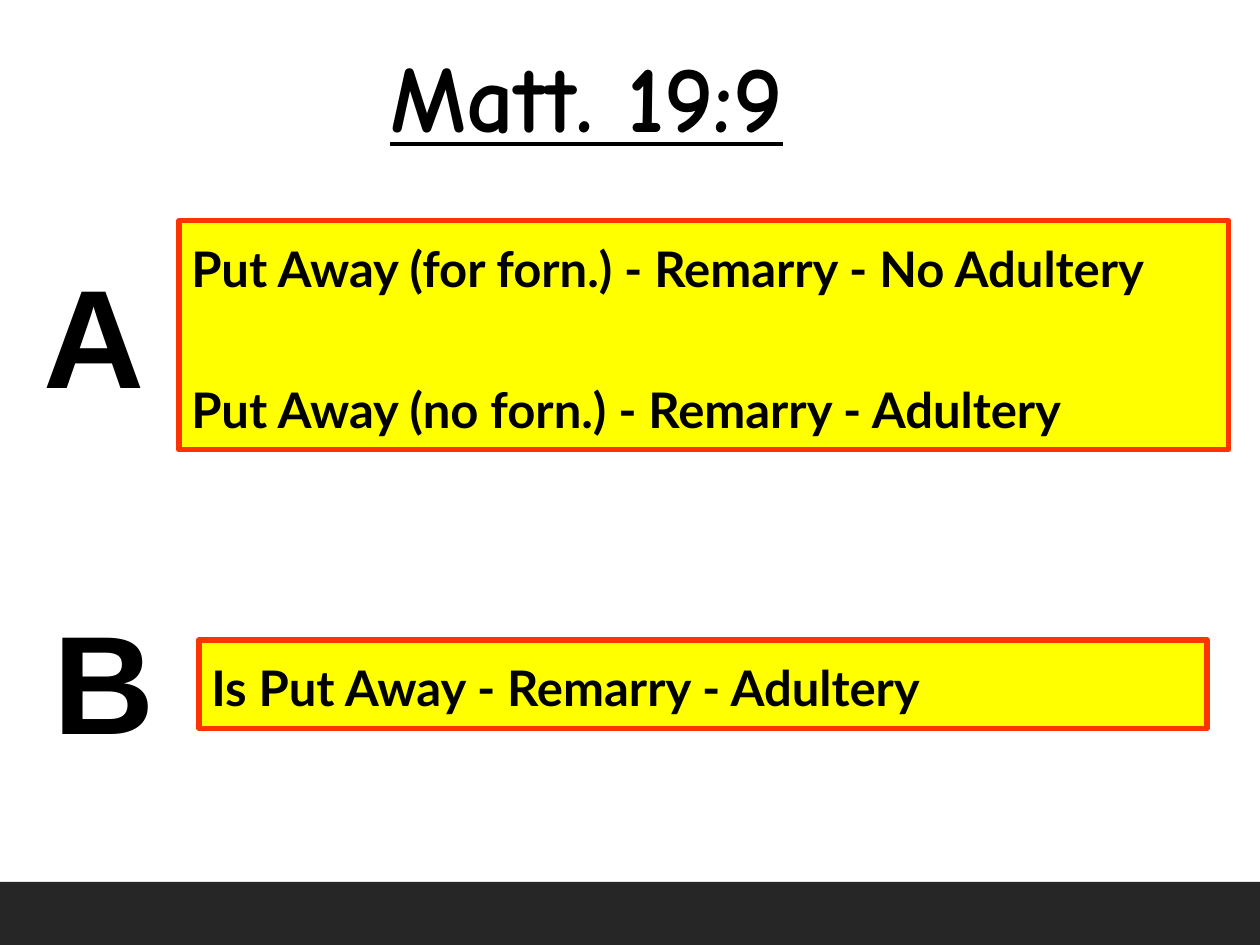
from pptx import Presentation
from pptx.dml.color import RGBColor
from pptx.enum.shapes import MSO_SHAPE as Shape
from pptx.enum.text import MSO_ANCHOR as Anchor, MSO_AUTO_SIZE as AutoSize, PP_ALIGN as Align
from pptx.util import Inches, Pt

COLORS = {"text": "000000", "panel": "FFFF00", "border": "FF3300", "footer": "262626"}


def color(name):
    return RGBColor.from_string(COLORS[name])


def add_rectangle(page, box, fill):
    shape = page.shapes.add_shape(Shape.RECTANGLE, *map(Inches, box))
    shape.shadow.inherit = False
    shape.fill.solid()
    shape.fill.fore_color.rgb = color(fill)
    shape.line.fill.background()
    return shape


def write_lines(frame, lines, font, size, underline=None):
    frame.text = "\n".join(lines)
    frame.vertical_anchor = Anchor.TOP
    frame.auto_size = AutoSize.SHAPE_TO_FIT_TEXT
    for para in frame.paragraphs:
        para.alignment = Align.LEFT
        for span in para.runs:
            span.font.name = font
            span.font.size = Pt(size)
            span.font.bold = True
            span.font.underline = underline
            span.font.color.rgb = color("text")


def add_label(page, box, text, font, size, underline=None):
    label = page.shapes.add_textbox(*map(Inches, box))
    label.text_frame.word_wrap = False
    write_lines(label.text_frame, [text], font, size, underline)


def add_panel(page, box, lines):
    panel = add_rectangle(page, box, "panel")
    panel.line.color.rgb = color("border")
    panel.line.width = Pt(3)
    frame = panel.text_frame
    frame.word_wrap = True
    write_lines(frame, lines, "Lato", 28)
    for para in frame.paragraphs:
        para.line_spacing = 1.2
    for para in frame.paragraphs[1:]:
        para.space_before = Pt(40.3)


def main():
    deck = Presentation()
    deck.slide_width, deck.slide_height = Inches(10), Inches(7.5)
    page = deck.slides.add_slide(deck.slide_layouts[6])
    add_rectangle(page, (0, 7, 10, 0.5), "footer")
    add_panel(page, (1.42, 1.75, 8.33, 1.82), [
        "Put Away (for forn.) - Remarry - No Adultery",
        "Put Away (no forn.) - Remarry - Adultery",
    ])
    add_panel(page, (1.58, 5.08, 8, 0.7), ["Is Put Away - Remarry - Adultery"])
    add_label(page, (0.25, 1.92, 1, 1.43), "A", "Arial", 80)
    add_label(page, (0.33, 4.67, 1, 1.43), "B", "Arial", 80)
    add_label(page, (3, 0.25, 4.34, 1), "Matt. 19:9", "Comic Neue", 54, True)
    deck.save("out.pptx")


if __name__ == "__main__":
    main()
